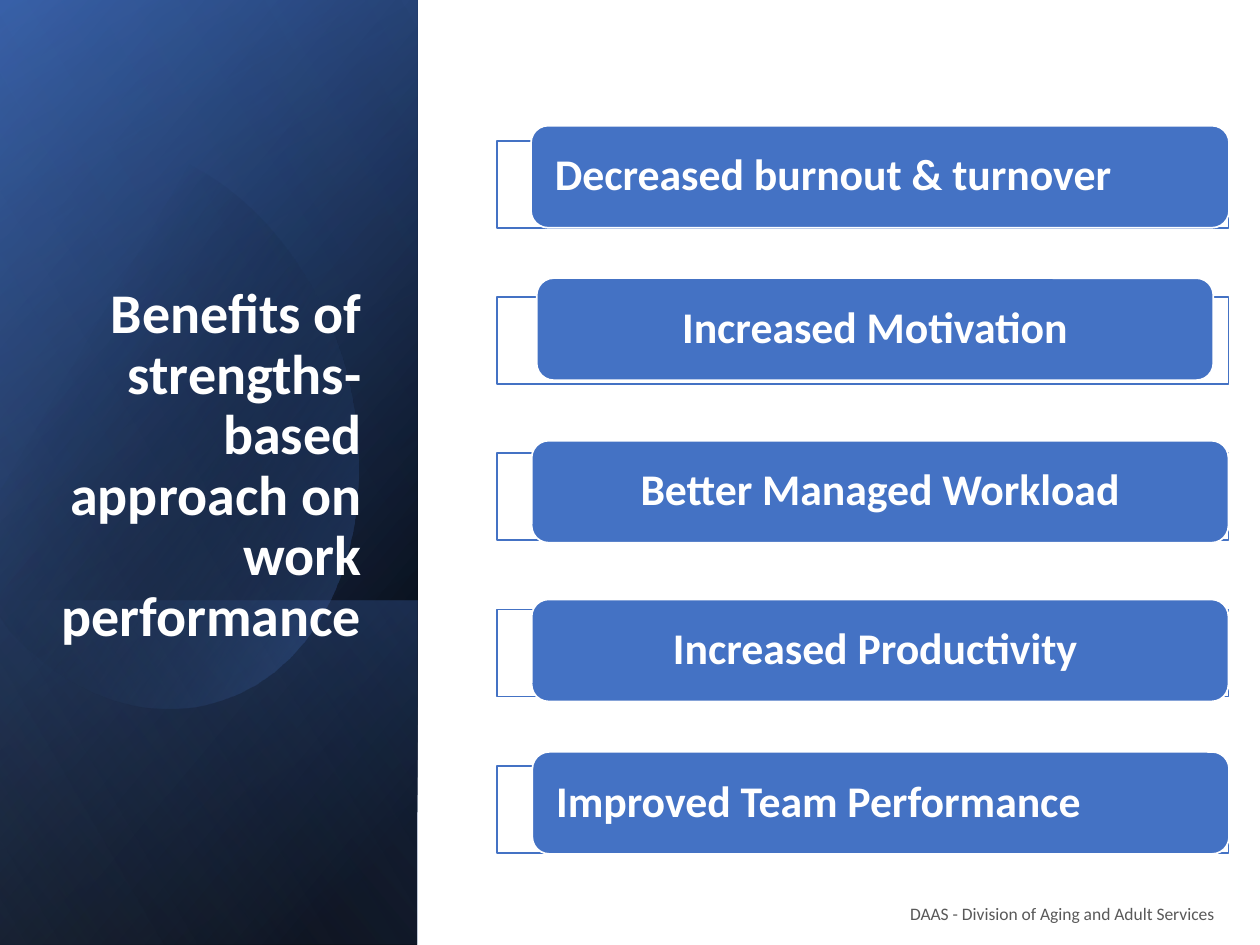
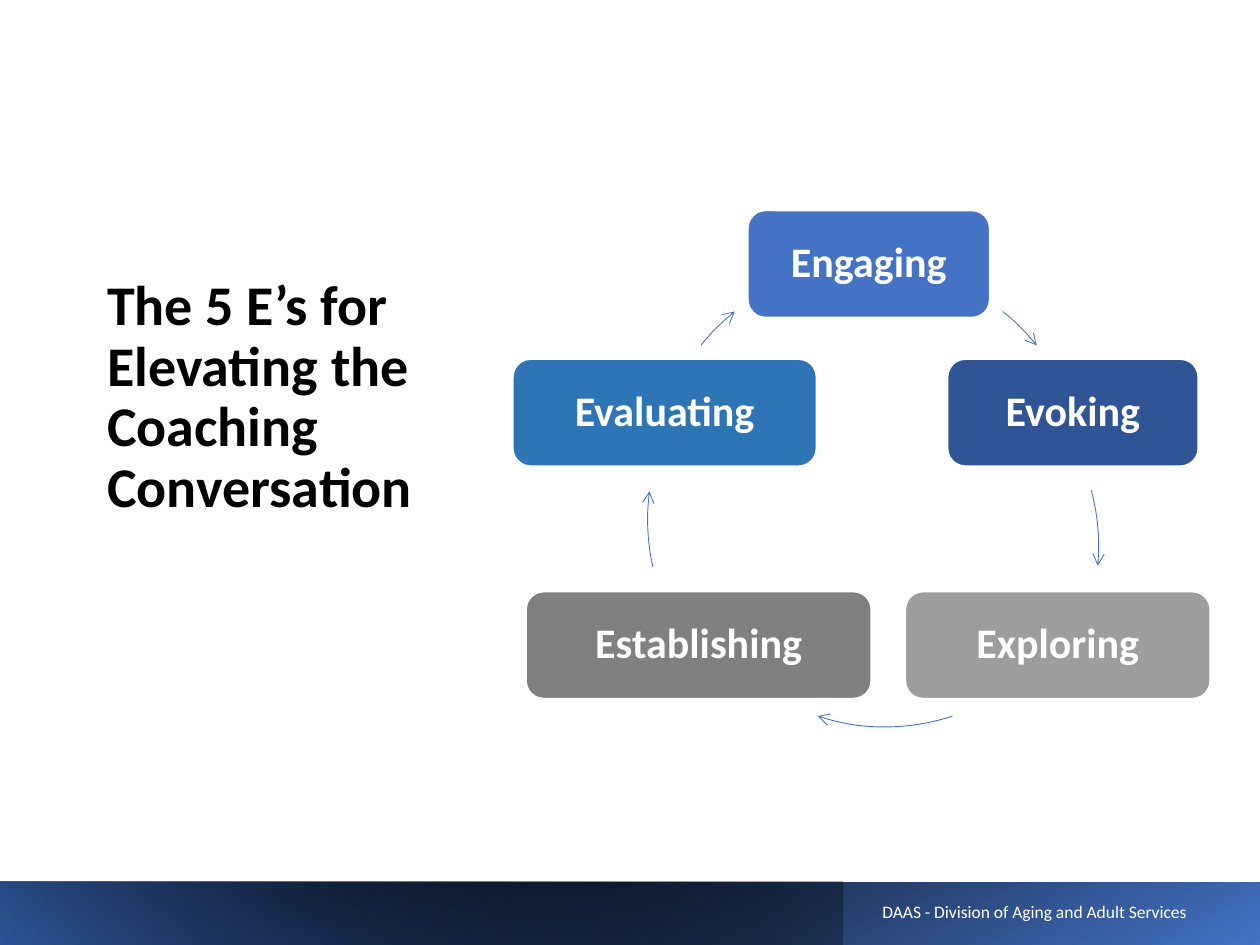
import pptx
import pptx.dml.color
import pptx.enum.shapes
import pptx.enum.text
import pptx.oxml
import pptx.oxml.ns
import pptx.util
from lxml import etree

COLS, ROWS = 40, 30
UNIT = pptx.util.Inches(0.25)
FONT = "Calibri"
BLUE, NAVY, PALE, STEEL = "4472C4", "2F5597", "8FAADC", "2E75B6"
GREY, SILVER, INK, BLACK, WHITE = "808080", "9D9D9D", "595959", "000000", "FFFFFF"
FOOTER = "DAAS - Division of Aging and Adult Services"

SHAPE = pptx.enum.shapes.MSO_SHAPE
ALIGN = pptx.enum.text.PP_ALIGN
ANCHOR = pptx.enum.text.MSO_ANCHOR
qn = pptx.oxml.ns.qn


def rgb(hex_color):
    return pptx.dml.color.RGBColor.from_string(hex_color)


def emu(length):
    return round(length * UNIT)


def within(box, col, row, cols, rows):
    return box[0] + col, box[1] + row, cols, rows


def place(sp, box):
    sp.left, sp.top, sp.width, sp.height = map(emu, box)


def set_alpha(color, percent):
    etree.SubElement(color, qn("a:alpha")).set("val", str(percent * 1000))


def paint(sp, fill=None, line=None, width=1):
    sp.shadow.inherit = False
    if fill:
        sp.fill.solid()
        sp.fill.fore_color.rgb = rgb(fill)
    else:
        sp.fill.background()
    if line:
        sp.line.color.rgb = rgb(line)
        sp.line.width = pptx.util.Pt(width)
    else:
        sp.line.fill.background()


def add_box(s, kind, box, fill=None, line=None, width=1):
    sp = s.shapes.add_shape(kind, *map(emu, box))
    paint(sp, fill, line, width)
    return sp


def add_gradient(sp, stops, angle):
    paint(sp)
    sp_pr = sp.element.spPr
    old = sp_pr.find(qn("a:noFill"))
    grad = pptx.oxml.parse_xml(
        f'<a:gradFill {pptx.oxml.ns.nsdecls("a")} rotWithShape="1"/>')
    stop_list = etree.SubElement(grad, qn("a:gsLst"))
    for position, color, alpha in stops:
        stop = etree.SubElement(stop_list, qn("a:gs"))
        stop.set("pos", str(position * 1000))
        color_el = etree.SubElement(stop, qn("a:srgbClr"))
        color_el.set("val", color)
        set_alpha(color_el, alpha)
    lin = etree.SubElement(grad, qn("a:lin"))
    lin.set("ang", str(angle * 60000))
    lin.set("scaled", "0")
    sp_pr.replace(old, grad)


def add_band(s, box, stops, angle, rotation=0):
    x, y, w, h = box
    if rotation == 90:
        x, y, w, h = x + (w - h) / 2, y + (h - w) / 2, h, w
    sp = add_box(s, SHAPE.RECTANGLE, (x, y, w, h))
    sp.rotation = rotation
    sp.element.spPr.find(qn("a:xfrm")).set("flipH", "1")
    add_gradient(sp, stops, angle)


def bezier(points, steps=16):
    def at(t):
        level = points
        while len(level) > 1:
            level = [((1 - t) * a + t * c, (1 - t) * b + t * d)
                     for (a, b), (c, d) in zip(level, level[1:])]
        return level[0]
    return [at(i / steps) for i in range(steps + 1)]


def add_outline(s, box, points):
    dots = [(emu(box[0] + x), emu(box[1] + y)) for x, y in points]
    builder = s.shapes.build_freeform(*dots[0], scale=1.0)
    builder.add_line_segments(dots[1:], close=True)
    return builder.convert_to_shape()


def write(sp, text, size, color, bold=False, align=ALIGN.CENTER,
          anchor=ANCHOR.MIDDLE, spacing=None):
    tf = sp.text_frame
    tf.word_wrap = True
    tf.auto_size = pptx.enum.text.MSO_AUTO_SIZE.NONE
    tf.vertical_anchor = anchor
    tf.text = text
    p = tf.paragraphs[0]
    p.alignment = align
    p.line_spacing = spacing
    p.font.name = FONT
    p.font.size = pptx.util.Pt(size)
    p.font.bold = bold
    p.font.color.rgb = rgb(color)


def add_title(s, box, text, color, align, anchor):
    title = s.shapes.title
    place(title, box)
    write(title, text, 32, color, True, align, anchor, 0.9)
    s.shapes.element.append(title.element)


def add_footer(s, box, color):
    write(s.shapes.add_textbox(*map(emu, box)), FOOTER, 10, color)


def add_pill(s, box, text, size, fill, inset, align=ALIGN.CENTER):
    sp = add_box(s, SHAPE.ROUNDED_RECTANGLE, box, fill, WHITE)
    write(sp, text, size, WHITE, True, align, spacing=0.9)
    tf = sp.text_frame
    tf.margin_left = tf.margin_right = pptx.util.Inches(inset)
    tf.margin_top = tf.margin_bottom = 0


def add_sidebar(s, box):
    add_band(s, box, [(8, BLACK, 100), (100, NAVY, 100)], 50, 90)
    add_band(s, box, [(0, BLACK, 0), (99, BLUE, 46)], 30, 90)
    lower = within(box, 0, 19.05, box[2], box[3] - 19.05)
    add_band(s, lower, [(2, BLUE, 29), (100, BLACK, 30)], 130, 90)
    curves = [
        [(3.84, 4.56), (6.84, 4.88), (9.76, 7.68), (10.92, 11.6)],
        [(10.92, 11.6), (12.28, 16.48), (10.48, 21.24), (6.84, 22.28)],
        [(6.84, 22.28), (4.56, 22.96), (2.12, 22), (0.28, 20)],
        [(0, 19.6), (0, 5.6)],
        [(0, 5.6), (0.5, 5.2), (1.1, 4.9), (1.8, 4.72)],
        [(1.8, 4.72), (2.52, 4.52), (3.16, 4.48), (3.84, 4.56)],
    ]
    points = [point for curve in curves for point in bezier(curve)]
    oval = add_outline(s, box, points)
    add_gradient(oval, [(29, BLACK, 0), (100, BLUE, 43)], 30)
    add_band(s, box, [(0, BLACK, 0), (99, PALE, 11)], 120, 90)


def add_benefits(s, box, benefits):
    pitch = 4.96
    for i, (text, indent, lift, width, align) in enumerate(benefits):
        top = 0.48 + i * pitch
        frame = add_box(s, SHAPE.RECTANGLE,
                        within(box, 0, top, box[2], 2.76), WHITE, BLUE)
        set_alpha(frame.element.spPr.find(qn("a:solidFill"))[0], 90)
        pill = within(box, indent, top - lift, width, 3.24)
        add_pill(s, pill, text, 25, BLUE, 0.15, align)


def add_cycle(s, box, steps, arrows):
    diameter = 13.64
    for text, col, row, cols, fill in steps:
        add_pill(s, within(box, col, row, cols, 3.4), text, 24, fill, 0.1)
    for col, row, start, end in arrows:
        arrow = add_box(s, SHAPE.ARC, within(box, col, row, diameter, diameter),
                        line=BLUE, width=0.5)
        for i, degrees in enumerate((start, end)):
            arrow.adjustments[i] = degrees * 0.6
        ln = arrow.element.spPr.find(qn("a:ln"))
        etree.SubElement(ln, qn("a:tailEnd")).set("type", "arrow")


def add_bottom_band(s, box):
    add_band(s, box, [(0, BLUE, 100), (78, BLACK, 100)], 120, 180)
    left = within(box, 0, 0, 26.76, box[3])
    add_band(s, left, [(0, BLACK, 28), (100, NAVY, 100)], 50)


def build_benefits_slide(s):
    add_box(s, SHAPE.RECTANGLE, (0, 0, COLS, ROWS), WHITE)
    add_sidebar(s, (0, 0, 13.25, ROWS))
    add_title(s, (1.36, 5.98, 10.52, 14.8),
              "Benefits of strengths-based approach on work performance",
              WHITE, ALIGN.RIGHT, ANCHOR.BOTTOM)
    add_benefits(s, (15.78, 3.99, 23.22, 23.08), [
        ("Decreased burnout & turnover", 1.08, 0.48, 22.16, ALIGN.LEFT),
        ("Increased Motivation", 1.26, 0.6, 21.48, ALIGN.CENTER),
        ("Better Managed Workload", 1.1, 0.4, 22.12, ALIGN.CENTER),
        ("Increased Productivity ", 1.1, 0.32, 22.12, ALIGN.CENTER),
        ("Improved Team Performance", 1.12, 0.44, 22.12, ALIGN.LEFT),
    ])
    add_footer(s, (27.52, 28.17, 12.4, 1.68), INK)


def build_cycle_slide(s):
    add_bottom_band(s, (0, 28, COLS, 2))
    add_title(s, (3, 8.6, 12, 10.08),
              "The 5 E’s for Elevating the Coaching Conversation",
              BLACK, ALIGN.LEFT, ANCHOR.TOP)
    add_cycle(s, (16.28, 6.68, 22.16, 16.6), [
        ("Engaging", 7.46, 0, 7.68, BLUE),
        ("Evoking", 13.8, 4.72, 7.96, NAVY),
        ("Exploring", 12.46, 12.1, 9.68, SILVER),
        ("Establishing", 0.42, 12.1, 10.96, GREY),
        ("Evaluating", 0, 4.72, 9.64, STEEL),
    ], [
        (4.48, 1.72, 308.6, 321.4),
        (4.96, 3.84, 344.9, 5.2),
        (5, 2.76, 71.7, 108.3),
        (4.28, 3, 167.3, 187.6),
        (4.48, 1.72, 218.6, 231.4),
    ])
    add_footer(s, (26.64, 28.1, 12.4, 1.68), WHITE)


def main():
    prs = pptx.Presentation()
    prs.slide_width, prs.slide_height = emu(COLS), emu(ROWS)
    for build in (build_benefits_slide, build_cycle_slide):
        build(prs.slides.add_slide(prs.slide_layouts.get_by_name("Title Only")))
    prs.save("out.pptx")


if __name__ == "__main__":
    main()
